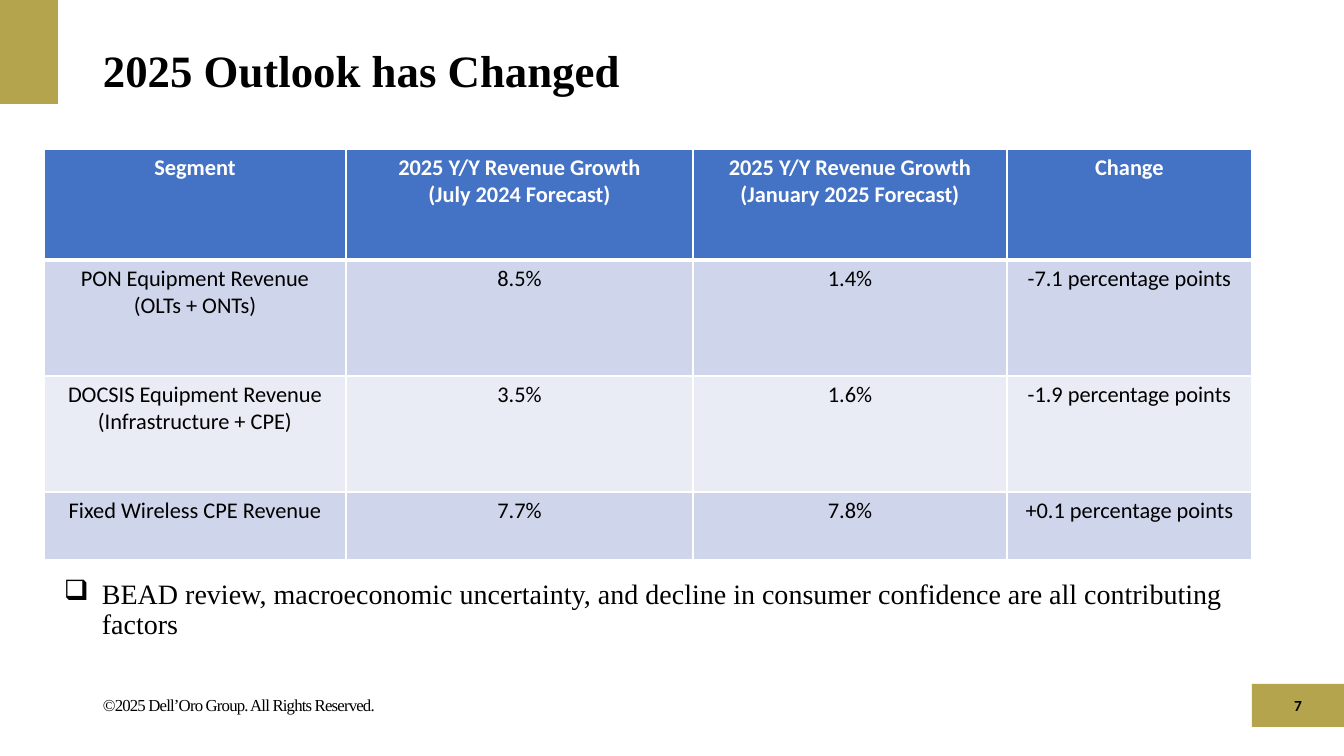
import pptx
import pptx.dml.color
import pptx.enum.shapes
import pptx.enum.text
import pptx.oxml.ns
import pptx.util
from dataclasses import dataclass
from lxml import etree

EMU_PER_PX = 914400 / 100.8
ALIGN = pptx.enum.text.PP_ALIGN
ANCHOR = pptx.enum.text.MSO_ANCHOR


@dataclass(frozen=True)
class Theme:
    gold: str = "B3A44D"
    header: str = "4472C4"
    bands: tuple = ("CFD5EA", "E9EBF5")
    white: str = "FFFFFF"
    black: str = "000000"
    serif: str = "Times New Roman"
    sans: str = "Calibri"
    title_size: int = 32
    bullet_size: int = 20
    table_size: int = 16
    footer_size: int = 12
    number_size: int = 11


THEME = Theme()
COLUMN_WIDTHS = (302, 347, 314, 245)
ROW_HEIGHTS = (111, 116, 116, 68)
OUTLOOK = (
    (
        ("Segment",),
        ("2025 Y/Y Revenue Growth", "(July 2024 Forecast)"),
        ("2025 Y/Y Revenue Growth", "(January 2025 Forecast)"),
        ("Change",),
    ),
    (("PON Equipment Revenue", "(OLTs + ONTs)"), ("8.5%",), ("1.4%",), ("-7.1 percentage points",)),
    (("DOCSIS Equipment Revenue", "(Infrastructure + CPE)"), ("3.5%",), ("1.6%",), ("-1.9 percentage points",)),
    (("Fixed Wireless CPE Revenue",), ("7.7%",), ("7.8%",), ("+0.1 percentage points",)),
)


def px(length):
    return pptx.util.Emu(round(length * EMU_PER_PX))


def rgb(color):
    return pptx.dml.color.RGBColor.from_string(color)


def add_run(paragraph, text, font_name, size, color=THEME.black, bold=False):
    run = paragraph.add_run()
    run.text = text
    run.font.name = font_name
    run.font.size = pptx.util.Pt(size)
    run.font.color.rgb = rgb(color)
    run.font.bold = bold
    return run


def add_block(slide, left, top, width, height):
    shape = slide.shapes.add_shape(
        pptx.enum.shapes.MSO_SHAPE.RECTANGLE, px(left), px(top), px(width), px(height)
    )
    shape.shadow.inherit = False
    shape.fill.solid()
    shape.fill.fore_color.rgb = rgb(THEME.gold)
    shape.line.fill.background()


def add_text(slide, box, text, font_name, size, bold=False, anchor=ANCHOR.TOP, align=ALIGN.LEFT):
    shape = slide.shapes.add_textbox(*map(px, box))
    frame = shape.text_frame
    frame.word_wrap = True
    frame.vertical_anchor = anchor
    paragraph = frame.paragraphs[0]
    paragraph.alignment = align
    run = add_run(paragraph, text, font_name, size, bold=bold)
    return paragraph, run


def add_bullet(paragraph, symbol, indent):
    properties = paragraph._p.get_or_add_pPr()
    properties.set("marL", str(px(indent)))
    properties.set("indent", str(-px(indent)))
    bullet = etree.SubElement(properties, pptx.oxml.ns.qn("a:buChar"))
    bullet.set("char", symbol)


def set_borders(cell, bottom_width):
    properties = cell._tc.get_or_add_tcPr()
    for side, width in (("L", 1), ("R", 1), ("T", 1), ("B", bottom_width)):
        line = etree.SubElement(properties, pptx.oxml.ns.qn(f"a:ln{side}"))
        line.set("w", str(pptx.util.Pt(width)))
        fill = etree.SubElement(line, pptx.oxml.ns.qn("a:solidFill"))
        etree.SubElement(fill, pptx.oxml.ns.qn("a:srgbClr")).set("val", THEME.white)


def fill_cell(cell, lines, row_index):
    is_header = row_index == 0
    set_borders(cell, 3 if is_header else 1)
    cell.fill.solid()
    cell.fill.fore_color.rgb = rgb(THEME.header if is_header else THEME.bands[(row_index - 1) % 2])
    color = THEME.white if is_header else THEME.black
    for index, text in enumerate(lines):
        frame = cell.text_frame
        paragraph = frame.add_paragraph() if index else frame.paragraphs[0]
        paragraph.alignment = ALIGN.CENTER
        add_run(paragraph, text, THEME.sans, THEME.table_size, color, is_header)


def add_outlook_table(slide, left, top):
    table = slide.shapes.add_table(
        len(ROW_HEIGHTS), len(COLUMN_WIDTHS), px(left), px(top),
        px(sum(COLUMN_WIDTHS)), px(sum(ROW_HEIGHTS)),
    ).table
    for column, width in zip(table.columns, COLUMN_WIDTHS):
        column.width = px(width)
    for row_index, (row, height) in enumerate(zip(table.rows, ROW_HEIGHTS)):
        row.height = px(height)
        for cell, lines in zip(row.cells, OUTLOOK[row_index]):
            fill_cell(cell, lines, row_index)


def main():
    presentation = pptx.Presentation()
    presentation.slide_width = px(1344)
    presentation.slide_height = px(756)
    slide = presentation.slides.add_slide(presentation.slide_layouts[6])

    _, copyright_run = add_text(
        slide, (93, 690, 320, 30), "©2025 Dell’Oro Group. All Rights Reserved.",
        THEME.serif, THEME.footer_size,
    )
    copyright_run._r.get_or_add_rPr().set("spc", "-60")
    add_block(slide, 0, 0, 58, 104)
    add_block(slide, 1252, 684, 92, 43)

    title, _ = add_text(
        slide, (93, 40, 1159, 67), "2025 Outlook has Changed",
        THEME.serif, THEME.title_size, bold=True, anchor=ANCHOR.MIDDLE,
    )
    title.line_spacing = 0.9
    add_text(
        slide, (1252, 682, 92, 46), "7", THEME.sans, THEME.number_size,
        bold=True, anchor=ANCHOR.MIDDLE, align=ALIGN.CENTER,
    )
    add_outlook_table(slide, 44, 149)

    factors, _ = add_text(
        slide, (54, 575, 1198, 97),
        "BEAD review, macroeconomic uncertainty, and decline in consumer confidence"
        " are all contributing factors",
        THEME.serif, THEME.bullet_size,
    )
    add_bullet(factors, "❑", 38)
    factors.line_spacing = 0.9

    presentation.save("out.pptx")


if __name__ == "__main__":
    main()
